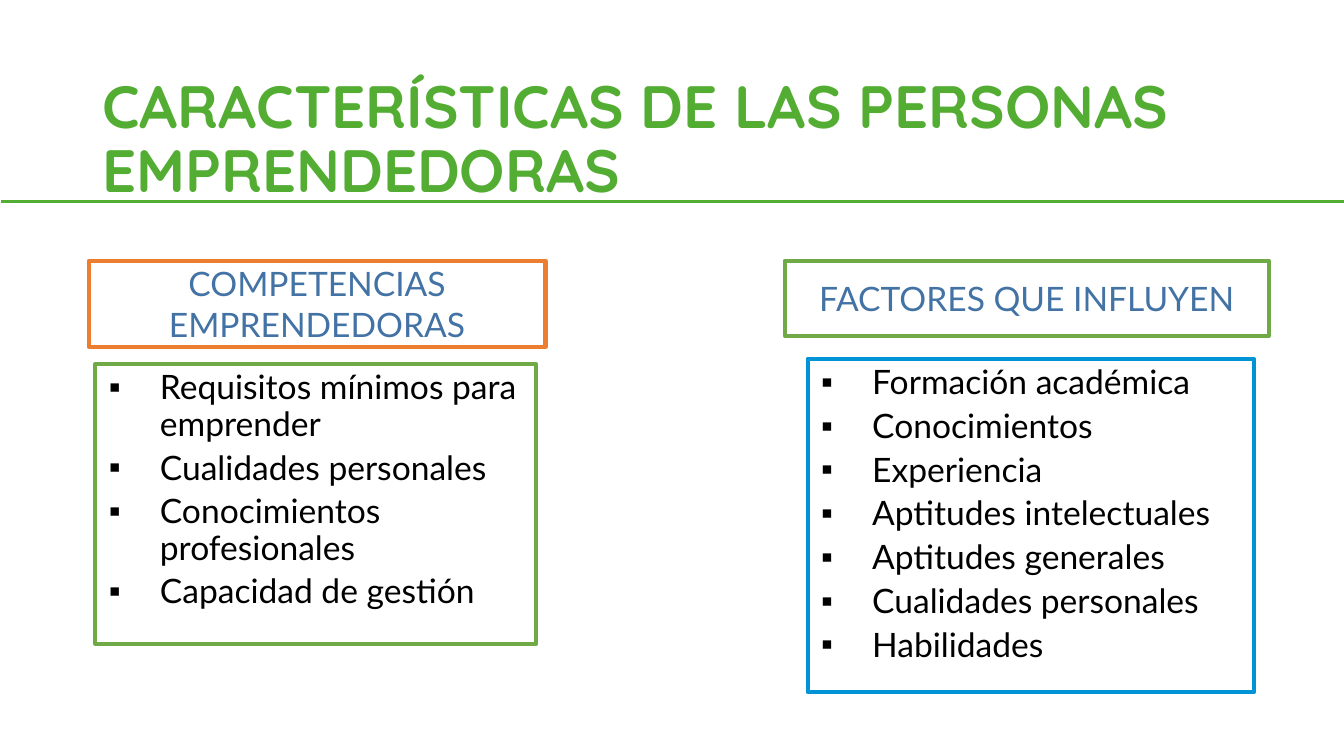
from dataclasses import dataclass

from lxml import etree
from pptx import Presentation
from pptx import util as u
from pptx.dml.color import RGBColor
from pptx.enum import shapes, text
from pptx.oxml import ns

WIDTH = u.Inches(10)
HEIGHT = u.Emu(WIDTH * 9 // 16)
COLUMNS = 100
CELL = WIDTH / COLUMNS


@dataclass(frozen=True)
class Theme:
    title_font: str = "Quicksand"
    body_font: str = "Lato"
    title_size: int = 32
    body_size: int = 18
    frame_width: float = 2.25
    rule_width: float = 2
    title: str = "53AD32"
    heading: str = "4372A5"
    ink: str = "000000"
    green: str = "6FAA47"
    orange: str = "ED7D31"
    blue: str = "0093D6"


THEME = Theme()


def cells(*counts):
    return [u.Emu(round(count * CELL)) for count in counts]


def place(element, area):
    element.left, element.top, element.width, element.height = cells(*area)


def style_font(paragraph, name, size, color, bold=False):
    font = paragraph.font
    font.name, font.size, font.bold = name, u.Pt(size), bold
    font.color.rgb = RGBColor.from_string(color)


def style_line(line, color, width):
    line.color.rgb = RGBColor.from_string(color)
    line.width = u.Pt(width)


def prepare_frame(frame, anchor):
    frame.word_wrap = True
    frame.auto_size = text.MSO_AUTO_SIZE.NONE
    frame.vertical_anchor = anchor


def add_bullet(paragraph):
    properties = paragraph._p.get_or_add_pPr()
    indent = u.Inches(0.38)
    properties.set("marL", str(indent))
    properties.set("indent", str(-indent))
    color = etree.SubElement(properties, ns.qn("a:buClr"))
    etree.SubElement(color, ns.qn("a:srgbClr"), val=THEME.ink)
    etree.SubElement(properties, ns.qn("a:buChar"), char="▪")


def fill_title(title, wording, area):
    place(title, area)
    prepare_frame(title.text_frame, text.MSO_ANCHOR.MIDDLE)
    title.text_frame.text = wording
    paragraph = title.text_frame.paragraphs[0]
    paragraph.alignment = text.PP_ALIGN.LEFT
    paragraph.line_spacing = 0.9
    style_font(paragraph, THEME.title_font, THEME.title_size, THEME.title, bold=True)


def fill_list(body, items, area, color, first_gap):
    place(body, area)
    style_line(body.line, color, THEME.frame_width)
    prepare_frame(body.text_frame, text.MSO_ANCHOR.TOP)
    body.text_frame.text = "\n".join(items)
    for position, paragraph in enumerate(body.text_frame.paragraphs):
        paragraph.line_spacing = 0.9
        paragraph.space_before = u.Pt(4 if position else first_gap)
        add_bullet(paragraph)
        style_font(paragraph, THEME.body_font, THEME.body_size, THEME.ink)


def add_heading(slide, wording, area, color):
    heading = slide.shapes.add_shape(shapes.MSO_SHAPE.RECTANGLE, *cells(*area))
    heading.shadow.inherit = False
    heading.fill.background()
    style_line(heading.line, color, THEME.frame_width)
    prepare_frame(heading.text_frame, text.MSO_ANCHOR.MIDDLE)
    heading.text_frame.text = wording
    paragraph = heading.text_frame.paragraphs[0]
    paragraph.alignment = text.PP_ALIGN.CENTER
    style_font(paragraph, THEME.body_font, THEME.body_size, THEME.heading)


def add_rule(slide, row):
    left, right, level = cells(0.1, COLUMNS + 0.1, row)
    rule = slide.shapes.add_connector(
        shapes.MSO_CONNECTOR.STRAIGHT, left, level, right, level
    )
    style_line(rule.line, THEME.title, THEME.rule_width)
    etree.SubElement(rule._element.spPr, ns.qn("a:effectLst"))


def main():
    deck = Presentation()
    deck.slide_width, deck.slide_height = WIDTH, HEIGHT
    slide = deck.slides.add_slide(deck.slide_layouts.get_by_name("Two Content"))
    title, competencies, factors = slide.placeholders

    fill_title(
        title,
        "CARACTERÍSTICAS DE LAS PERSONAS EMPRENDEDORAS",
        (6.6, 5.1, 82.5, 10.8),
    )
    fill_list(
        competencies,
        [
            "Requisitos mínimos para emprender",
            "Cualidades personales",
            "Conocimientos profesionales",
            "Capacidad de gestión",
        ],
        (7.1, 27.1, 32.8, 20.8),
        THEME.green,
        first_gap=0,
    )
    fill_list(
        factors,
        [
            "Formación académica",
            "Conocimientos",
            "Experiencia",
            "Aptitudes intelectuales",
            "Aptitudes generales",
            "Cualidades personales",
            "Habilidades",
        ],
        (60.1, 26.7, 33.2, 24.8),
        THEME.blue,
        first_gap=4,
    )
    heading_row = 19.4
    add_heading(
        slide, "COMPETENCIAS EMPRENDEDORAS", (6.6, heading_row, 34, 6.4), THEME.orange
    )
    add_heading(
        slide, "FACTORES QUE INFLUYEN", (58.4, heading_row, 36, 5.6), THEME.green
    )
    add_rule(slide, 15)
    deck.save("out.pptx")


if __name__ == "__main__":
    main()
